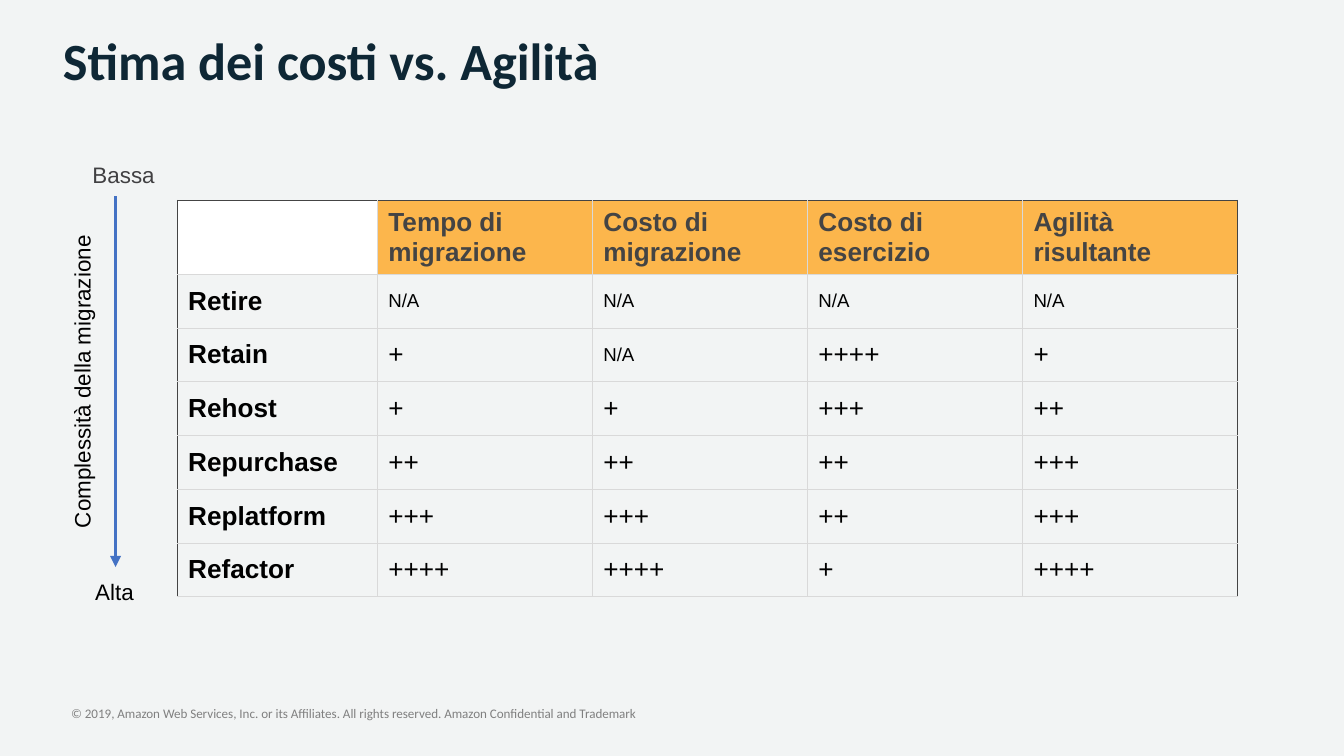
from lxml.etree import SubElement
from pptx import Presentation
from pptx.dml.color import RGBColor
from pptx.enum.shapes import MSO_CONNECTOR
from pptx.enum.text import MSO_ANCHOR, MSO_AUTO_SIZE, PP_ALIGN
from pptx.oxml.ns import qn
from pptx.util import Inches, Pt

COLORS = {
    "background": "F2F4F4", "title": "0E2735", "header": "FCB64C", "corner": "FFFFFF",
    "edge": "444444", "grid": "D9D9D9", "text": "000000", "low": "414042",
    "arrow": "4472C4", "footer": "808080",
}
HEADERS = ["", "Tempo di migrazione", "Costo di migrazione", "Costo di esercizio", "Agilità risultante"]
STRATEGIES = [
    ["Retire", "N/A", "N/A", "N/A", "N/A"],
    ["Retain", "+", "N/A", "++++", "+"],
    ["Rehost", "+", "+", "+++", "++"],
    ["Repurchase", "++", "++", "++", "+++"],
    ["Replatform", "+++", "+++", "++", "+++"],
    ["Refactor", "++++", "++++", "+", "++++"],
]
COLUMN_WIDTHS = [1.49, 1.6, 1.6, 1.6, 1.6]
ROW_HEIGHTS = [0.55] + [0.4] * len(STRATEGIES)
FOOTER = ("© 2019, Amazon Web Services, Inc. or its Affiliates. All rights reserved. "
          "Amazon Confidential and Trademark")


def rgb(name):
    """Return the named colour."""
    return RGBColor.from_string(COLORS[name])


def set_values(target, values):
    """Set each attribute of the target from a dict."""
    for name, value in values.items():
        setattr(target, name, value)


def write_text(text_frame, text, size, color, font="Arial", bold=False):
    """Write one formatted paragraph into a text frame."""
    paragraph = text_frame.paragraphs[0]
    run = paragraph.add_run()
    run.text = text
    set_values(run.font, {"name": font, "size": Pt(size), "bold": bold})
    run.font.color.rgb = rgb(color)
    return paragraph


def add_label(slide, box, text, size, color, font="Arial", bold=False, frame=None):
    """Add a text box with one paragraph."""
    shape = slide.shapes.add_textbox(*map(Inches, box))
    set_values(shape.text_frame, {"word_wrap": True, **(frame or {})})
    paragraph = write_text(shape.text_frame, text, size, color, font, bold)
    return shape, paragraph


def set_borders(cell, sides):
    """Draw thin cell borders from a dict of side tags and colour names."""
    properties = cell._tc.get_or_add_tcPr()
    for tag, color in sides.items():
        line = SubElement(properties, qn(f"a:{tag}"), w=str(Pt(0.5)))
        fill = SubElement(line, qn("a:solidFill"))
        SubElement(fill, qn("a:srgbClr"), val=COLORS[color])


def format_cell(cell, text, row, column):
    """Format and fill one table cell according to its place."""
    set_borders(cell, {
        "lnL": "edge" if column == 0 else "grid",
        "lnR": "edge" if column == len(HEADERS) - 1 else "grid",
        "lnT": "edge" if row == 0 else "grid",
        "lnB": "grid",
    })
    set_values(cell, {
        "vertical_anchor": MSO_ANCHOR.MIDDLE,
        "margin_left": Inches(0.08), "margin_right": Inches(0.08),
        "margin_top": Inches(0.04), "margin_bottom": Inches(0.04),
    })
    if row == 0:
        cell.fill.solid()
        cell.fill.fore_color.rgb = rgb("header" if column else "corner")
    else:
        cell.fill.background()
    if text:
        write_text(cell.text_frame, text, 10 if text == "N/A" else 14,
                   "text" if row else "edge", bold=row == 0 or column == 0)


def add_strategy_table(slide):
    """Add the table that compares the migration strategies."""
    rows = [HEADERS] + STRATEGIES
    size = [Inches(sum(COLUMN_WIDTHS)), Inches(sum(ROW_HEIGHTS))]
    table = slide.shapes.add_table(len(rows), len(HEADERS), Inches(1.32), Inches(1.49), *size).table
    set_values(table, {"first_row": False, "horz_banding": False})
    for column, width in zip(table.columns, COLUMN_WIDTHS):
        column.width = Inches(width)
    for row, height in zip(table.rows, ROW_HEIGHTS):
        row.height = Inches(height)
    for row, texts in enumerate(rows):
        for column, text in enumerate(texts):
            format_cell(table.cell(row, column), text, row, column)


def add_arrow(slide, start, end):
    """Add a straight line with an arrowhead at its end."""
    arrow = slide.shapes.add_connector(MSO_CONNECTOR.STRAIGHT, *map(Inches, start + end))
    arrow.line.color.rgb = rgb("arrow")
    arrow.line.width = Pt(1.25)
    SubElement(arrow.line._get_or_add_ln(), qn("a:tailEnd"), type="triangle")
    SubElement(arrow._element.spPr, qn("a:effectLst"))


def main():
    """Build the slide and save it."""
    presentation = Presentation()
    set_values(presentation, {"slide_width": Inches(10), "slide_height": Inches(10) * 9 // 16})
    slide = presentation.slides.add_slide(presentation.slide_layouts[6])
    slide.background.fill.solid()
    slide.background.fill.fore_color.rgb = rgb("background")

    grow = {"auto_size": MSO_AUTO_SIZE.SHAPE_TO_FIT_TEXT}
    margins = dict.fromkeys(["margin_left", "margin_top", "margin_right", "margin_bottom"], 0)
    add_label(slide, (0.53, 5.25, 4.86, 0.12), FOOTER, 7, "footer", "Calibri", frame={**grow, **margins})
    add_strategy_table(slide)
    add_label(slide, (0.59, 1.15, 0.7, 0.3), "Bassa", 12, "low", frame=grow)
    add_label(slide, (0.61, 4.25, 0.49, 0.3), "Alta", 12, "text", frame={**grow, "word_wrap": False})
    axis, paragraph = add_label(slide, (-0.77, 2.69, 2.76, 0.3), "Complessità della migrazione",
                                12, "text", frame=grow)
    axis.rotation = 270
    paragraph.alignment = PP_ALIGN.CENTER
    add_arrow(slide, (0.86, 1.46), (0.86, 4.22))
    add_label(slide, (0.37, 0.14, 8.97, 0.6), "Stima dei costi vs. Agilità", 28, "title", "Calibri", True,
              {"vertical_anchor": MSO_ANCHOR.MIDDLE})
    presentation.save("out.pptx")


if __name__ == "__main__":
    main()
